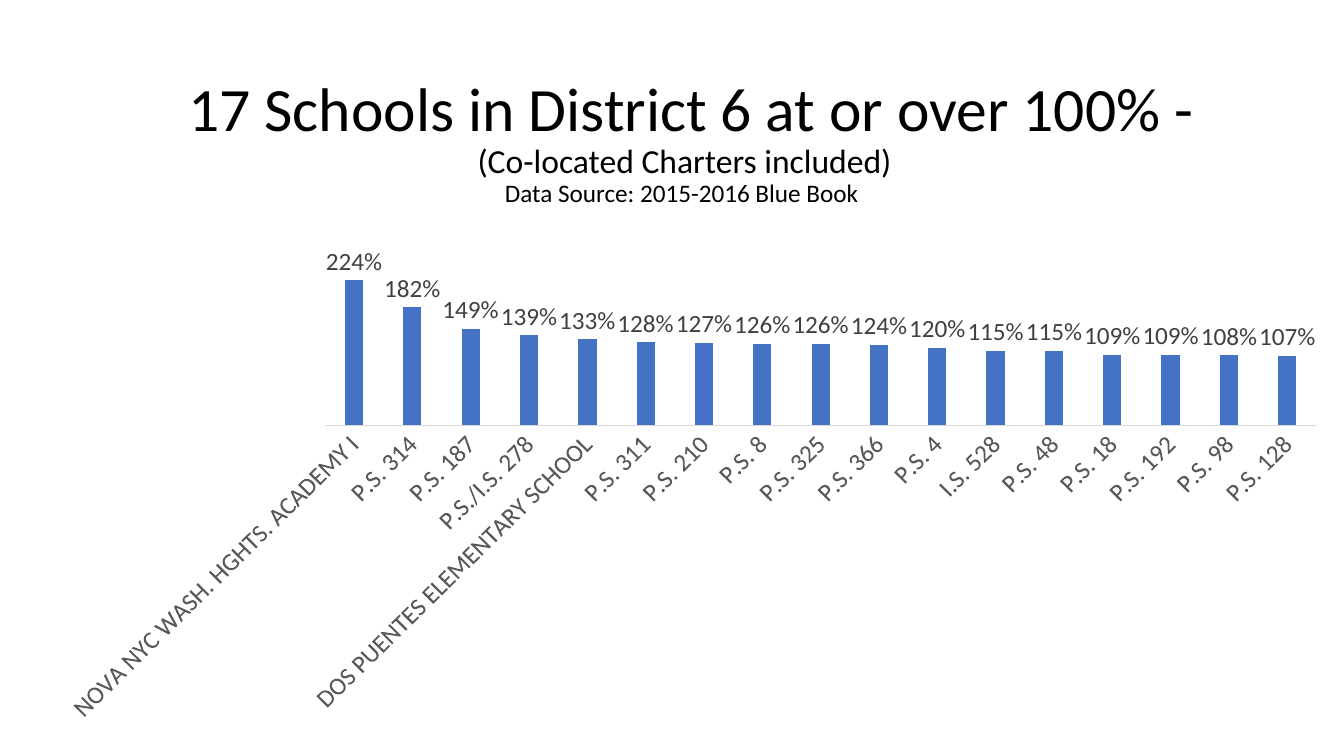
import pptx
import pptx.chart.data
import pptx.dml.color
import pptx.enum.chart
import pptx.enum.text
import pptx.util

Pt = pptx.util.Pt
FONT = "Calibri"
COLORS = {"ink": "000000", "bar": "4472C4", "axis": "D9D9D9",
          "name": "595959", "value": "404040"}
TITLE = [(" 17 Schools in District 6 at or over 100% -", 44),
         ("(Co-located Charters included)", 24),
         ("Data Source: 2015-2016 Blue Book ", 18)]
SCHOOLS = [
    ("NOVA NYC WASH. HGHTS. ACADEMY I", 2.24), ("P.S. 314", 1.82),
    ("P.S. 187", 1.49), ("P.S./I.S. 278", 1.39),
    ("DOS PUENTES ELEMENTARY SCHOOL", 1.33), ("P.S. 311", 1.28),
    ("P.S. 210", 1.27), ("P.S. 8", 1.26), ("P.S. 325", 1.26),
    ("P.S. 366", 1.24), ("P.S. 4", 1.2), ("I.S. 528", 1.15),
    ("P.S. 48", 1.15), ("P.S. 18", 1.09), ("P.S. 192", 1.09),
    ("P.S. 98", 1.08), ("P.S. 128", 1.07),
]


class Deck:
    def __init__(self, wide, high):
        self.prs = pptx.Presentation()
        self.prs.slide_width, self.prs.slide_height = Pt(wide), Pt(high)
        self.slide = self.prs.slides.add_slide(self.prs.slide_layouts[6])

    def color(self, name):
        return pptx.dml.color.RGBColor.from_string(COLORS[name])

    def style(self, font, size, name):
        font.name, font.size = FONT, Pt(size)
        font.color.rgb = self.color(name)

    def title(self, box, lines):
        frame = self.slide.shapes.add_textbox(*map(Pt, box)).text_frame
        frame.word_wrap = True
        frame.vertical_anchor = pptx.enum.text.MSO_ANCHOR.MIDDLE
        para = frame.paragraphs[0]
        para.alignment = pptx.enum.text.PP_ALIGN.CENTER
        para.line_spacing = 0.9
        for row, (text, size) in enumerate(lines):
            if row:
                para.add_line_break()
            run = para.add_run()
            run.text = text
            self.style(run.font, size, "ink")

    def columns(self, box, items):
        data = pptx.chart.data.CategoryChartData(number_format="0%")
        data.categories = [name for name, _ in items]
        data.add_series("Series 1", [value for _, value in items])
        kind = pptx.enum.chart.XL_CHART_TYPE.COLUMN_CLUSTERED
        chart = self.slide.shapes.add_chart(kind, *map(Pt, box), data).chart
        chart.has_legend = chart.has_title = False
        self.style(chart.font, 10, "ink")

        plot = chart.plots[0]
        plot.gap_width, plot.overlap = 219, -27
        plot.vary_by_categories = False
        fill = plot.series[0].format.fill
        fill.solid()
        fill.fore_color.rgb = self.color("bar")
        self.labels(plot)
        self.axes(chart)

    def labels(self, plot):
        plot.has_data_labels = True
        labels = plot.data_labels
        labels.show_value = True
        labels.number_format, labels.number_format_is_linked = "0%", False
        labels.position = pptx.enum.chart.XL_LABEL_POSITION.OUTSIDE_END
        self.style(labels.font, 18, "value")

    def axes(self, chart):
        names, values = chart.category_axis, chart.value_axis
        names.major_tick_mark = pptx.enum.chart.XL_TICK_MARK.NONE
        names.format.line.color.rgb = self.color("axis")
        names.format.line.width = Pt(0.75)
        self.style(names.tick_labels.font, 18, "name")
        turn = names._element.txPr.find(pptx.oxml.ns.qn("a:bodyPr"))
        turn.set("rot", "-2700000")
        turn.set("vert", "horz")
        values.minimum_scale = 0
        values.has_major_gridlines = False
        values.visible = False


def main():
    deck = Deck(960, 540)
    deck.title((75, 50, 828, 104), TITLE)
    deck.columns((29, 176, 930, 347), SCHOOLS)
    deck.prs.save("out.pptx")


if __name__ == "__main__":
    main()
